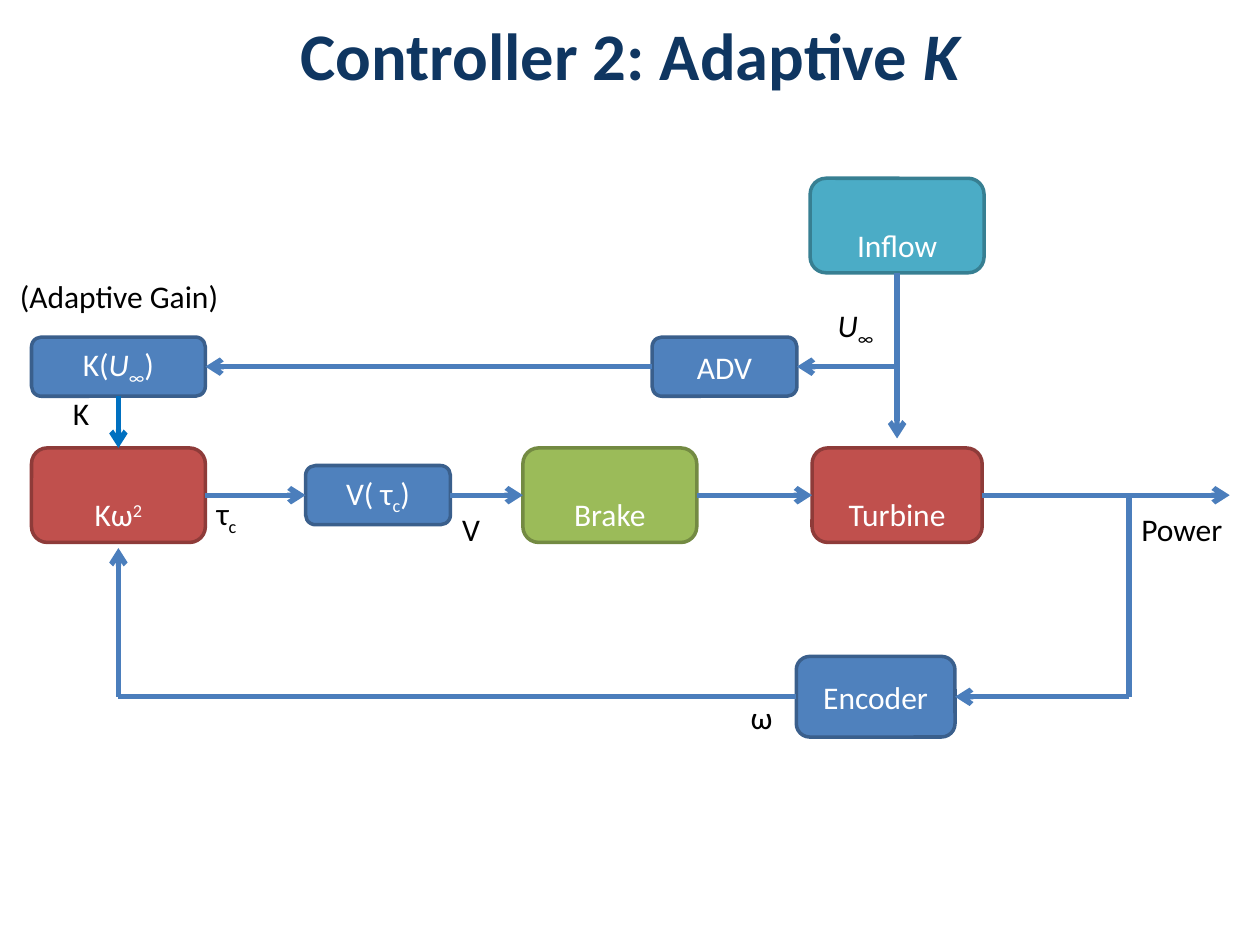
from pptx import Presentation, util as u
from pptx.dml.color import RGBColor
from pptx.enum import shapes, text
from pptx.oxml.ns import qn
from lxml import etree

TITLE = [("Controller 2: Adaptive ", ""), ("K", "i")]
LEFT, RIGHT, TAP = 0.94, 7.12, 8.96
TOP, MAIN, BACK = 2.91, 3.93, 5.53
BLUE, RED = ("4F81BD", "3A5F8C"), ("C0504D", "8E3B39")
GREEN, TEAL = ("9BBB59", "738A42"), ("4BACC6", "377F92")

BOXES = {
    "inflow": (RIGHT, 1.79, 1.38, 0.75, TEAL, 2, [("Inflow", "")]),
    "gain": (LEFT, TOP, 1.38, 0.47, BLUE, 1,
             [("K(", ""), ("U", "i"), ("∞", "sub"), (")", "")]),
    "adv": (5.75, TOP, 1.15, 0.47, BLUE, 1, [("ADV", "")]),
    "torque": (LEFT, MAIN, 1.38, 0.75, RED, 2, [("Kω", ""), ("2", "sup")]),
    "volt": (3, MAIN, 1.15, 0.47, BLUE, 1,
             [("V( τ", ""), ("c", "sub"), (")", "")]),
    "brake": (4.84, MAIN, 1.38, 0.75, GREEN, 2, [("Brake", "")]),
    "turbine": (RIGHT, MAIN, 1.35, 0.75, RED, 2, [("Turbine", "")]),
    "encoder": (6.95, BACK, 1.26, 0.64, BLUE, 1, [("Encoder", "")]),
}
LABELS = [
    (0.48, 3.08, 0.69, [("K", "")]),
    (1.62, 3.89, 0.69, [("τ", ""), ("c", "sub")]),
    (3.57, 4, 0.69, [("V", "")]),
    (5.86, 5.49, 0.69, [("ω", "")]),
    (8.96, 4, 0.92, [("Power", "")]),
    (6.55, 2.4, 0.92, [("U", "i"), ("∞", "sub")]),
    (0.06, 2.15, 1.8, [("(Adaptive Gain)", "")]),
]
UP, WEST, DOWN, EAST = range(4)
LINE = "4B7EBC"
LINKS = [
    (("inflow", DOWN), (RIGHT, 3.48), LINE, True),
    ((RIGHT, TOP), ("adv", EAST), LINE, True),
    (("adv", WEST), ("gain", EAST), LINE, True),
    (("gain", DOWN), ("torque", UP), "0070C0", True),
    (("torque", EAST), ("volt", WEST), LINE, True),
    (("volt", EAST), ("brake", WEST), LINE, True),
    (("brake", EAST), ("turbine", WEST), LINE, True),
    (("turbine", EAST), (9.76, MAIN), LINE, True),
    ((TAP, MAIN), (TAP, BACK), LINE, False),
    ((TAP, BACK), ("encoder", EAST), LINE, True),
    (("encoder", WEST), (LEFT, BACK), LINE, False),
    ((LEFT, BACK), (LEFT, 4.35), LINE, True),
]
SHIFT = {"sub": "-25000", "sup": "30000"}


def paint(part, color):
    part.rgb = RGBColor.from_string(color)


def write(frame, runs, color, size=18, bold=False):
    para = frame.paragraphs[0]
    for words, style in runs:
        run = para.add_run()
        run.text = words
        font = run.font
        font.name, font.size, font.bold = "Calibri", u.Pt(size), bold
        font.italic = style == "i"
        paint(font.color, color)
        if style in SHIFT:
            run._r.get_or_add_rPr().set("baseline", SHIFT[style])
    return para


def add_box(slide, mid_x, mid_y, wide, high, colors, space, runs):
    box = slide.shapes.add_shape(
        shapes.MSO_SHAPE.ROUNDED_RECTANGLE,
        u.Inches(mid_x - wide / 2), u.Inches(mid_y - high / 2),
        u.Inches(wide), u.Inches(high))
    box.shadow.inherit = False
    box.fill.solid()
    paint(box.fill.fore_color, colors[0])
    paint(box.line.color, colors[1])
    box.line.width = u.Pt(2)
    frame = box.text_frame
    frame.word_wrap = True
    frame.vertical_anchor = text.MSO_ANCHOR.MIDDLE
    para = write(frame, runs, "FFFFFF")
    para.alignment = text.PP_ALIGN.CENTER
    para.line_spacing, para.space_after = float(space), u.Pt(10)
    return box


def add_label(slide, left, top, wide, runs):
    label = slide.shapes.add_textbox(
        u.Inches(left), u.Inches(top), u.Inches(wide), u.Inches(0.4))
    frame = label.text_frame
    frame.word_wrap = True
    frame.vertical_anchor = text.MSO_ANCHOR.MIDDLE
    write(frame, runs, "000000")


def find(end):
    name, side = end
    if name not in BOXES:
        return end
    mid_x, mid_y, wide, high = BOXES[name][:4]
    step_x, step_y = [(0, -1), (-1, 0), (0, 1), (1, 0)][side]
    return mid_x + step_x * wide / 2, mid_y + step_y * high / 2


def add_link(slide, boxes, start, stop, color, arrow):
    spots = [u.Inches(value) for value in find(start) + find(stop)]
    link = slide.shapes.add_connector(shapes.MSO_CONNECTOR.STRAIGHT, *spots)
    if start[0] in boxes:
        link.begin_connect(boxes[start[0]], start[1])
    if stop[0] in boxes:
        link.end_connect(boxes[stop[0]], stop[1])
    paint(link.line.color, color)
    link.line.width = u.Pt(3)
    if arrow:
        etree.SubElement(link.line._get_or_add_ln(), qn("a:tailEnd"), type="arrow")
    etree.SubElement(link._element.spPr, qn("a:effectLst"))


def main():
    deck = Presentation()
    deck.slide_width, deck.slide_height = u.Inches(10), u.Inches(7.5)
    slide = deck.slides.add_slide(deck.slide_layouts[5])
    title = slide.shapes.title
    title.left, title.top = u.Inches(0), u.Inches(0.11)
    title.width, title.height = u.Inches(10), u.Inches(0.64)
    frame = title.text_frame
    frame.margin_left = frame.margin_right = 0
    frame.margin_top = frame.margin_bottom = 0
    frame.auto_size = text.MSO_AUTO_SIZE.NONE
    frame.vertical_anchor = text.MSO_ANCHOR.TOP
    write(frame, TITLE, "0F3661", 38, True).alignment = text.PP_ALIGN.CENTER
    boxes = {name: add_box(slide, *data) for name, data in BOXES.items()}
    for link in LINKS:
        add_link(slide, boxes, *link)
    for label in LABELS:
        add_label(slide, *label)
    deck.save("out.pptx")


if __name__ == "__main__":
    main()
